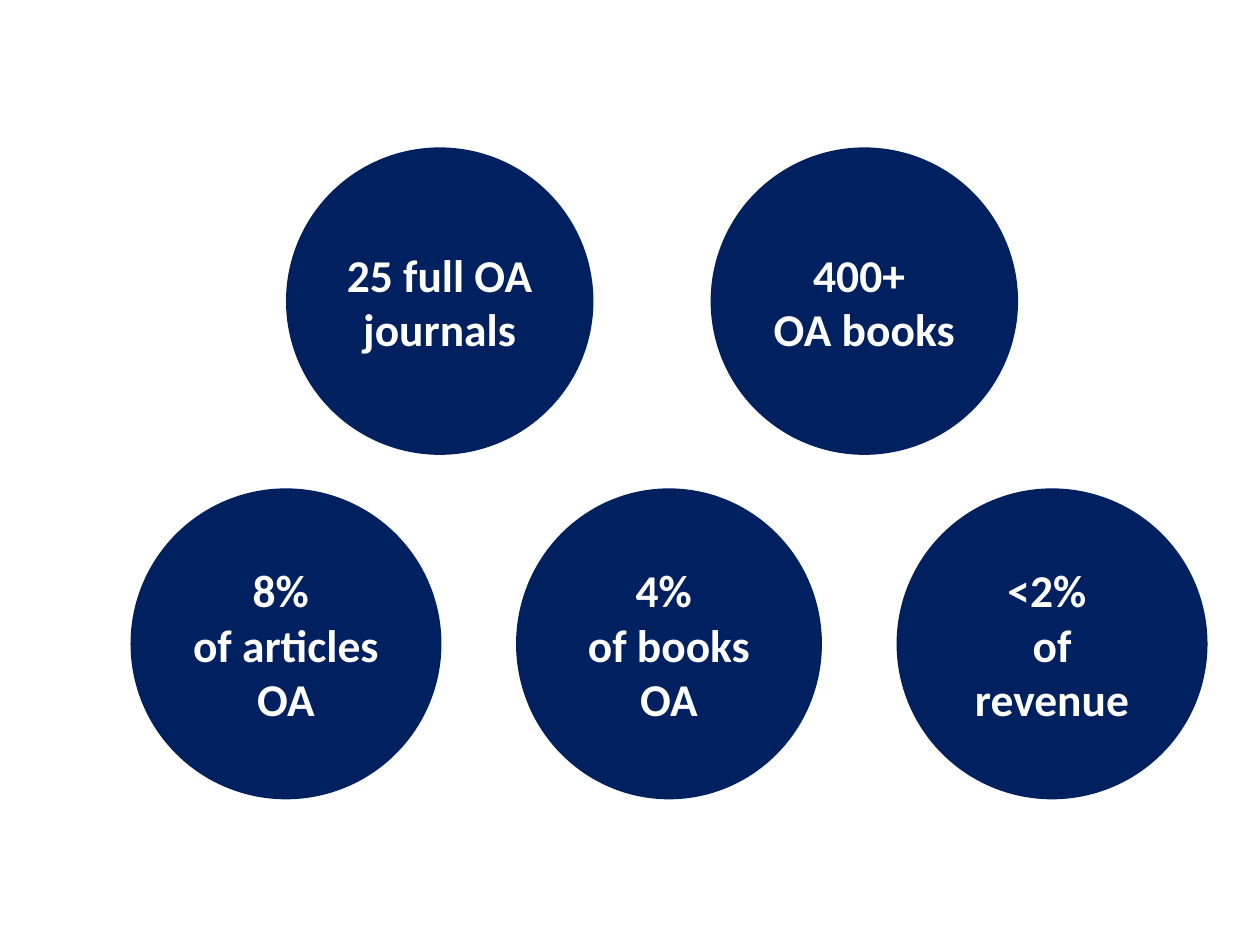
from pptx import Presentation
from pptx.dml.color import RGBColor
from pptx.enum.shapes import MSO_SHAPE
from pptx.enum.text import MSO_ANCHOR, PP_ALIGN
from pptx.util import Pt

NAVY = "002060"
WHITE = "FFFFFF"
SIZE = 175.68


def paint(target, color):
    target.rgb = RGBColor.from_string(color)


def write(frame, lines):
    frame.word_wrap = True
    frame.vertical_anchor = MSO_ANCHOR.MIDDLE
    for i, text in enumerate(lines):
        para = frame.paragraphs[0] if i == 0 else frame.add_paragraph()
        para.alignment = PP_ALIGN.CENTER
        run = para.add_run()
        run.text = text
        run.font.name = "Calibri"
        run.font.size = Pt(26)
        run.font.bold = True
        paint(run.font.color, WHITE)


def circle(slide, center, top, lines, width=SIZE, edged=False):
    shape = slide.shapes.add_shape(
        MSO_SHAPE.OVAL, Pt(center - width / 2), Pt(top), Pt(width), Pt(SIZE))
    shape.shadow.inherit = False
    shape.fill.solid()
    paint(shape.fill.fore_color, NAVY)
    if edged:
        shape.line.width = Pt(2)
        paint(shape.line.color, NAVY)
    else:
        shape.line.fill.background()
    write(shape.text_frame, lines)


def main():
    deck = Presentation()
    deck.slide_width, deck.slide_height = Pt(720), Pt(540)
    slide = deck.slides.add_slide(deck.slide_layouts[6])

    shares = [
        (["8% ", "of articles OA"], SIZE),
        (["4% ", "of books OA"], 172.8),
        (["<2% ", "of revenue"], SIZE),
    ]
    for i, (lines, width) in enumerate(shares):
        circle(slide, 163.44 + i * 218.88, 280.08, lines, width, edged=True)

    counts = [["25 full OA journals"], ["400+ ", "OA books"]]
    for i, lines in enumerate(counts):
        circle(slide, 251.28 + i * 242.64, 84.24, lines)

    deck.save("out.pptx")


if __name__ == "__main__":
    main()
